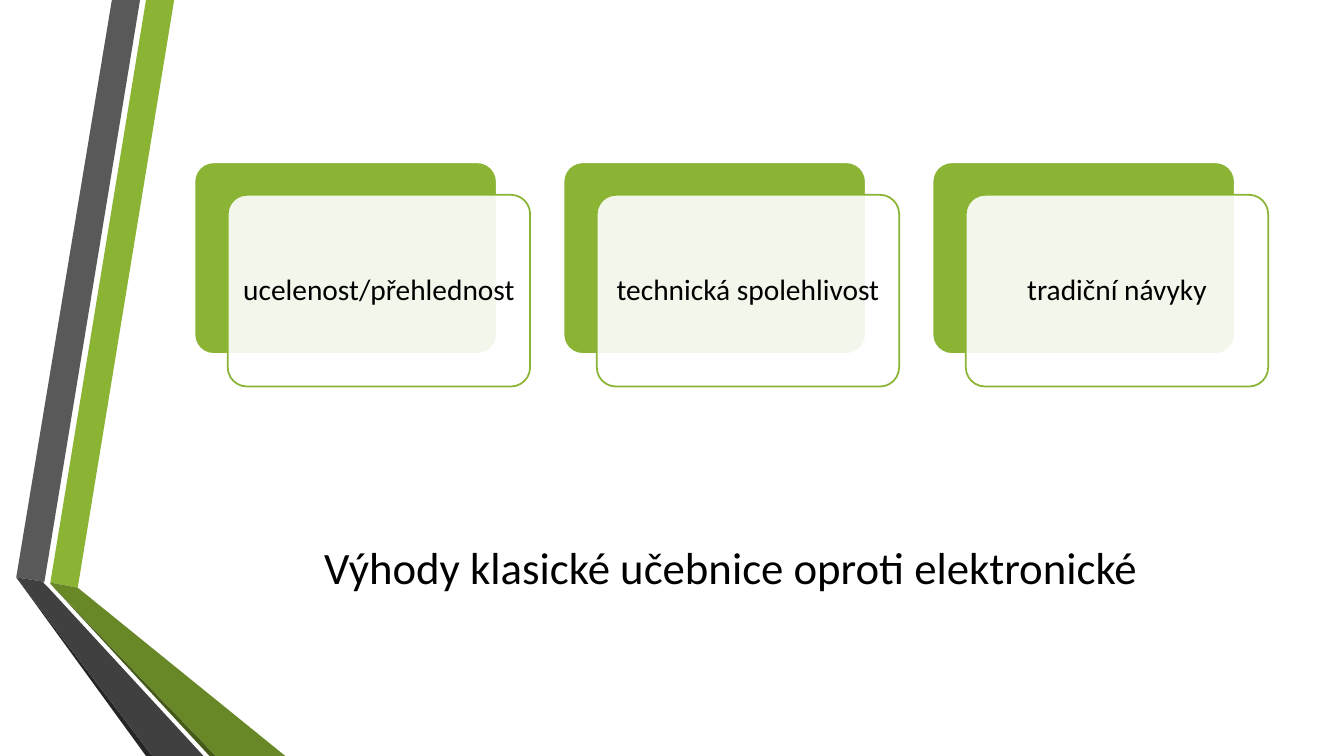
from lxml import etree
from pptx import Presentation
from pptx.dml.color import RGBColor
from pptx.enum.shapes import MSO_SHAPE
from pptx.enum.text import MSO_ANCHOR, MSO_AUTO_SIZE, PP_ALIGN
from pptx.oxml.ns import qn
from pptx.util import Cm, Pt

ROUNDED = MSO_SHAPE.ROUNDED_RECTANGLE
MIDDLE = MSO_ANCHOR.MIDDLE
CENTER = PP_ALIGN.CENTER
NO_AUTOFIT = MSO_AUTO_SIZE.NONE

TITLE = "Výhody klasické učebnice oproti elektronické"
ADVANTAGES = ["ucelenost/přehlednost", "technická spolehlivost", "tradiční návyky"]

FONT = "Calibri"
GREEN, WHITE, BLACK = "8BB434", "FFFFFF", "000000"
SLIDE_WIDTH, SLIDE_HEIGHT = 33.87, 19.05

# Ribbon facets: fill and corner points in centimetres
RIBBONS = [
    (GREEN, [(1.27, 14.68), (1.96, 14.81), (4.39, 0), (3.68, 0)]),
    ("595959", [(3.53, 0), (2.82, 0), (0.41, 14.55), (1.12, 14.66)]),
    ("262626", [(0.41, 14.55), (3.68, SLIDE_HEIGHT), (3.84, SLIDE_HEIGHT)]),
    ("465A1A", [(1.27, 14.71), (5.28, SLIDE_HEIGHT), (5.44, SLIDE_HEIGHT)]),
    ("688727", [(1.27, 14.68), (1.27, 14.71), (5.44, SLIDE_HEIGHT),
                (7.19, SLIDE_HEIGHT), (1.96, 14.81)]),
    ("404040", [(5.13, SLIDE_HEIGHT), (1.22, 14.81), (1.09, 14.68),
                (1.12, 14.66), (0.41, 14.55), (3.84, SLIDE_HEIGHT)]),
]

CARD_LEFT, CARD_TOP = 4.9, 4.09
CARD_WIDTH, CARD_HEIGHT = 7.62, 4.83
CARD_PITCH = 9.3
FRONT_SHIFT_X, FRONT_SHIFT_Y = 0.84, 0.82


def color(hex_code):
    return RGBColor.from_string(hex_code)


def paint(shape, fill, line=None, opacity=100):
    """Set fill and outline, and remove the shadow."""
    shape.shadow.inherit = False
    shape.fill.solid()
    shape.fill.fore_color.rgb = color(fill)
    if opacity < 100:
        fill_color = shape.fill._xPr.find(qn("a:solidFill"))[0]
        etree.SubElement(fill_color, qn("a:alpha"), val=str(opacity * 1000))
    if line:
        shape.line.color.rgb = color(line)
        shape.line.width = Pt(1.25)
    else:
        shape.line.fill.background()


def write(shape, text, size, inset=0.25, spacing=1.0):
    frame = shape.text_frame
    frame.word_wrap = True
    frame.auto_size = NO_AUTOFIT
    frame.vertical_anchor = MIDDLE
    frame.margin_left = frame.margin_right = Cm(inset)
    frame.margin_top = frame.margin_bottom = Cm(inset)
    para = frame.paragraphs[0]
    para.alignment = CENTER
    para.line_spacing = spacing
    span = para.add_run()
    span.text = text
    span.font.name = FONT
    span.font.size = Pt(size)
    span.font.color.rgb = color(BLACK)


def add_ribbon(page, fill, points):
    corners = [(Cm(x), Cm(y)) for x, y in points]
    builder = page.shapes.build_freeform(*corners[0])
    builder.add_line_segments(corners[1:], close=True)
    paint(builder.convert_to_shape(), fill)


def add_panel(page, left, top, **look):
    panel = page.shapes.add_shape(
        ROUNDED, Cm(left), Cm(top), Cm(CARD_WIDTH), Cm(CARD_HEIGHT))
    panel.adjustments[0] = 0.1
    paint(panel, **look)
    return panel


def main():
    deck = Presentation()
    deck.slide_width, deck.slide_height = Cm(SLIDE_WIDTH), Cm(SLIDE_HEIGHT)
    page = deck.slides.add_slide(deck.slide_layouts[5])

    for fill, points in RIBBONS:
        add_ribbon(page, fill, points)

    title = page.shapes.title
    title.left, title.top = Cm(4.9), Cm(12.37)
    title.width, title.height = Cm(27.05), Cm(3.84)
    write(title, TITLE, 32)

    for index, advantage in enumerate(ADVANTAGES):
        left = CARD_LEFT + index * CARD_PITCH
        add_panel(page, left, CARD_TOP, fill=GREEN, line=WHITE)
        front = add_panel(page, left + FRONT_SHIFT_X, CARD_TOP + FRONT_SHIFT_Y,
                          fill=WHITE, line=GREEN, opacity=90)
        write(front, advantage, 21, inset=0.2, spacing=0.9)

    deck.save("out.pptx")


if __name__ == "__main__":
    main()
